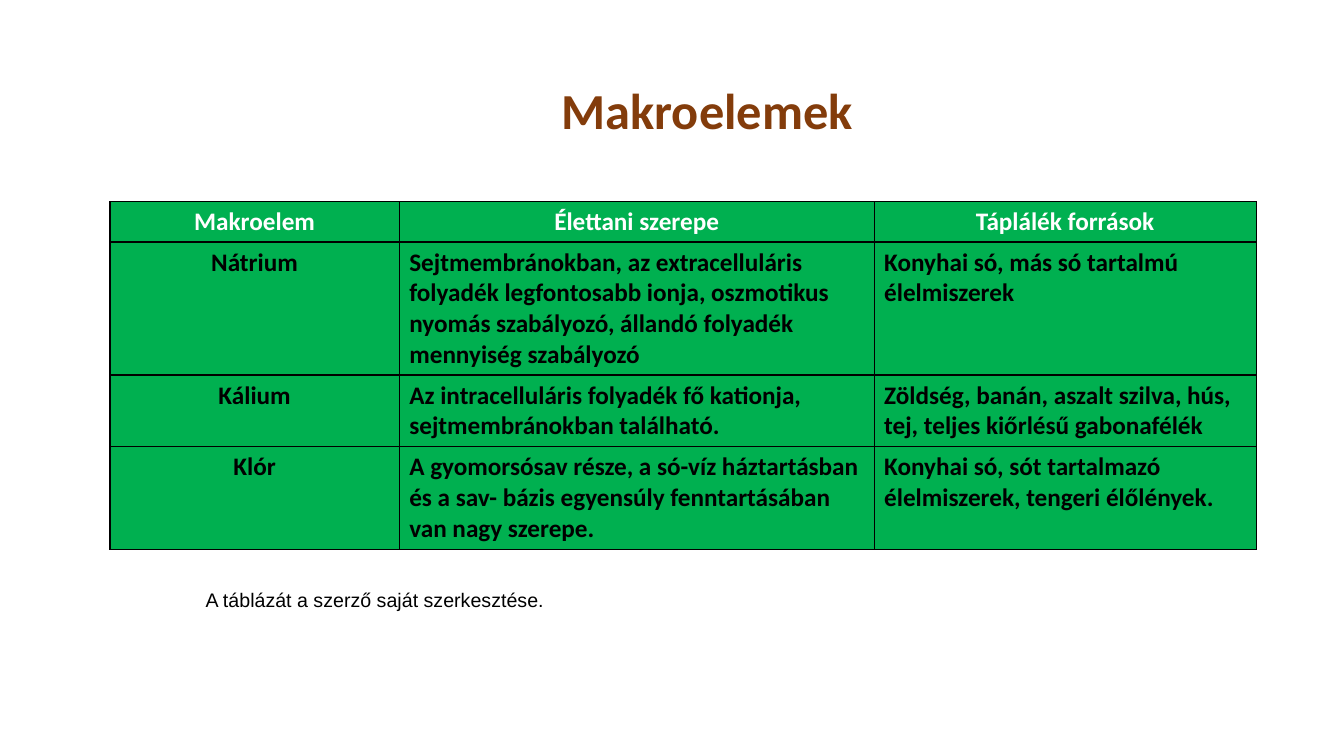
import pptx
import pptx.dml.color
import pptx.enum.text
import pptx.oxml
import pptx.oxml.ns
import pptx.util
from pptx.util import Inches

TITLE = "Makroelemek"
ROWS = [
    ("Makroelem", "Élettani szerepe", "Táplálék források"),
    ("Nátrium",
     "Sejtmembránokban, az extracelluláris folyadék legfontosabb ionja, "
     "oszmotikus nyomás szabályozó, állandó folyadék mennyiség szabályozó",
     "Konyhai só, más só tartalmú élelmiszerek"),
    ("Kálium",
     "Az intracelluláris folyadék fő kationja, sejtmembránokban található.",
     "Zöldség, banán, aszalt szilva, hús, tej, teljes kiőrlésű gabonafélék"),
    ("Klór",
     "A gyomorsósav része, a só-víz háztartásban és a sav- bázis egyensúly "
     "fenntartásában van nagy szerepe.",
     "Konyhai só, sót tartalmazó élelmiszerek, tengeri élőlények."),
]
SOURCE_NOTE = "A táblázát a szerző saját szerkesztése."
COLUMN_WIDTHS = (2.87, 4.71, 3.79)
ROW_HEIGHTS = (0.4, 1.32, 0.71, 1.02)

BLACK = pptx.dml.color.RGBColor(0x00, 0x00, 0x00)
WHITE = pptx.dml.color.RGBColor(0xFF, 0xFF, 0xFF)
GREEN = pptx.dml.color.RGBColor(0x00, 0xB0, 0x50)
BROWN = pptx.dml.color.RGBColor(0x83, 0x3C, 0x0B)
CENTER = pptx.enum.text.PP_ALIGN.CENTER
LEFT = pptx.enum.text.PP_ALIGN.LEFT


def write(frame, text, size, color, font="Calibri", bold=True, align=LEFT):
    paragraph = frame.paragraphs[0]
    paragraph.alignment = align
    run = paragraph.add_run()
    run.text = text
    run.font.name = font
    run.font.size = pptx.util.Pt(size)
    run.font.bold = bold
    run.font.color.rgb = color
    return paragraph


def add_text_box(slide, left, top, width, height):
    box = slide.shapes.add_textbox(*map(Inches, (left, top, width, height)))
    box.text_frame.word_wrap = True
    return box.text_frame


def add_borders(cell):
    properties = cell._tc.get_or_add_tcPr()
    for side in ("lnL", "lnR", "lnT", "lnB"):
        properties.append(pptx.oxml.parse_xml(
            f'<a:{side} {pptx.oxml.ns.nsdecls("a")} w="{pptx.util.Pt(1)}">'
            f'<a:solidFill><a:srgbClr val="{BLACK}"/></a:solidFill></a:{side}>'))


def add_element_table(slide):
    table = slide.shapes.add_table(
        len(ROWS), len(COLUMN_WIDTHS), Inches(1.09), Inches(2),
        Inches(sum(COLUMN_WIDTHS)), Inches(sum(ROW_HEIGHTS))).table
    for column, width in zip(table.columns, COLUMN_WIDTHS):
        column.width = Inches(width)
    for row, height in zip(table.rows, ROW_HEIGHTS):
        row.height = Inches(height)
    for row_index, texts in enumerate(ROWS):
        is_header = row_index == 0
        for column_index, text in enumerate(texts):
            cell = table.cell(row_index, column_index)
            add_borders(cell)
            cell.fill.solid()
            cell.fill.fore_color.rgb = GREEN
            write(cell.text_frame, text, 18, WHITE if is_header else BLACK,
                  align=CENTER if is_header or column_index == 0 else LEFT)


def main():
    presentation = pptx.Presentation()
    presentation.slide_width = Inches(13.33)
    presentation.slide_height = Inches(7.5)
    slide = presentation.slides.add_slide(presentation.slide_layouts[6])

    title_frame = add_text_box(slide, 0.7, 0.4, 12.63, 1.45)
    title_frame.vertical_anchor = pptx.enum.text.MSO_ANCHOR.MIDDLE
    write(title_frame, TITLE, 36, BROWN, align=CENTER).line_spacing = 0.9

    add_element_table(slide)

    note_frame = add_text_box(slide, 1.94, 5.78, 3.64, 0.57)
    write(note_frame, SOURCE_NOTE, 14, BLACK, font="Arial", bold=False)

    presentation.save("out.pptx")


if __name__ == "__main__":
    main()
